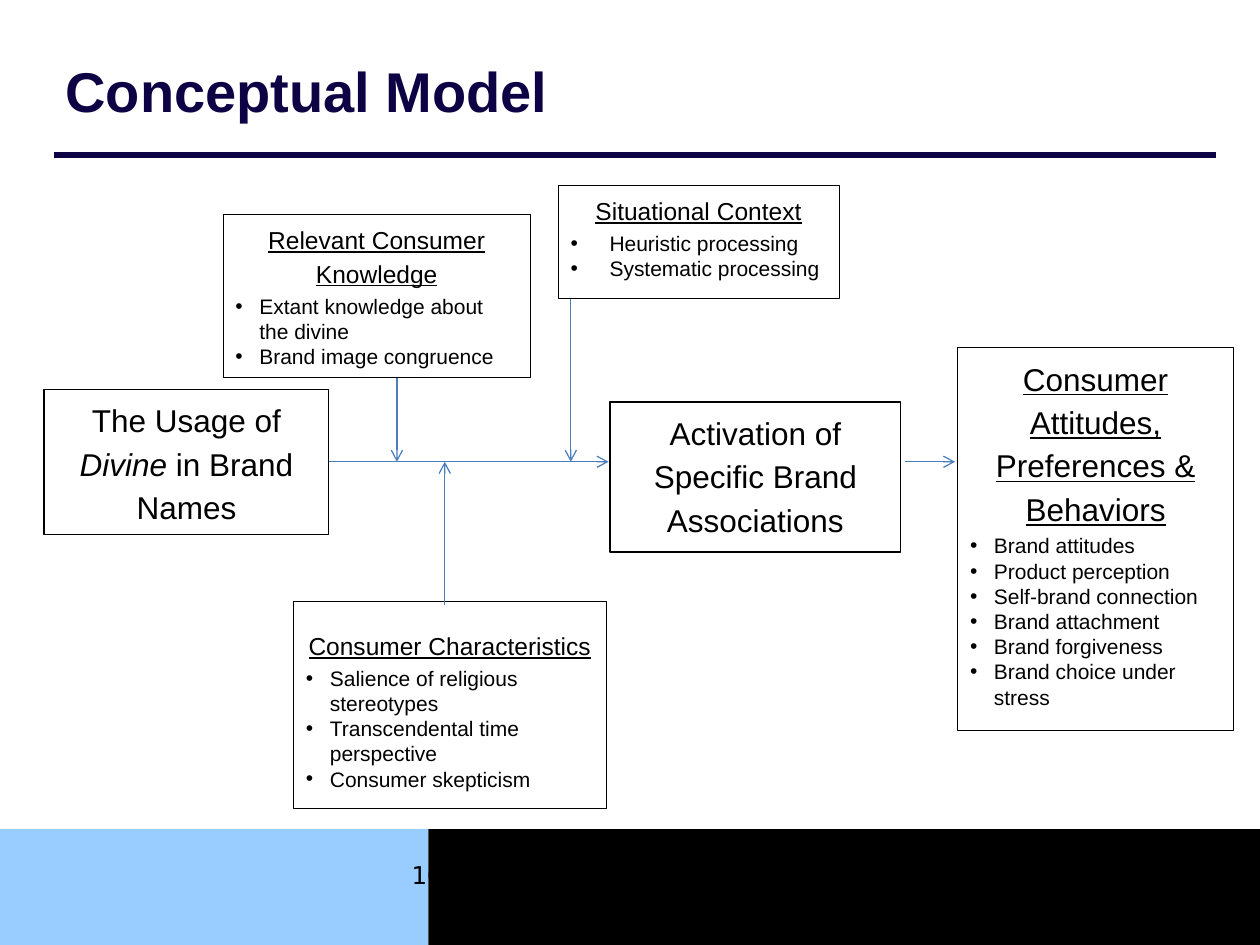
from lxml import etree
from pptx import Presentation, util as u
from pptx.dml.color import RGBColor
from pptx.enum import shapes, text
from pptx.oxml import ns

NAVY = RGBColor(0x0D, 0x03, 0x44)
SKY = RGBColor(0x99, 0xCC, 0xFF)
BLUE = RGBColor(0x4B, 0x7E, 0xBC)
BLACK = RGBColor(0, 0, 0)
WHITE = RGBColor(255, 255, 255)

deck = Presentation()
deck.slide_width, deck.slide_height = u.Inches(10), u.Inches(7.5)
slide = deck.slides.add_slide(deck.slide_layouts[5])
COL = deck.slide_width / 100
ROW = deck.slide_height / 75


def add_box(left, top, width, height, fill, border=None, heading=(), size=14,
            bullets=(), indent=0.19, inset=0.05):
    box = slide.shapes.add_shape(
        shapes.MSO_SHAPE.RECTANGLE, int(left * COL), int(top * ROW),
        int(width * COL), int(height * ROW))
    box.shadow.inherit = False
    box.fill.solid()
    box.fill.fore_color.rgb = fill
    if border:
        box.line.color.rgb = BLACK
        box.line.width = u.Pt(border)
    else:
        box.line.fill.background()
    frame = box.text_frame
    frame.word_wrap = True
    frame.vertical_anchor = text.MSO_ANCHOR.TOP
    frame.margin_top = u.Inches(inset)
    title_line = frame.paragraphs[0]
    title_line.alignment = text.PP_ALIGN.CENTER
    if heading:
        title_line.line_spacing = 1.15
        title_line.space_after = u.Pt(3)
    for position, part in enumerate(heading):
        run = title_line.add_run()
        run.text = part
        run.font.name, run.font.size = "Arial", u.Pt(size)
        run.font.color.rgb = BLACK
        run.font.underline = bool(bullets)
        run.font.italic = position == 1
    for bullet in bullets:
        item = frame.add_paragraph()
        item.text = bullet
        item.alignment = text.PP_ALIGN.LEFT
        props = item._p.get_or_add_pPr()
        props.set("marL", str(u.Inches(indent)))
        props.set("indent", str(-u.Inches(indent)))
        etree.SubElement(props, ns.qn("a:buFont"), typeface="Arial")
        etree.SubElement(props, ns.qn("a:buChar"), char="•")
        font = item.runs[0].font
        font.name, font.size = "Arial", u.Pt(12)
        font.color.rgb = BLACK
    return box


def add_line(x1, y1, x2, y2, color, weight, arrow=True):
    line = slide.shapes.add_connector(
        shapes.MSO_CONNECTOR.STRAIGHT, int(x1 * COL), int(y1 * ROW),
        int(x2 * COL), int(y2 * ROW))
    line.line.color.rgb = color
    line.line.width = u.Pt(weight)
    if arrow:
        etree.SubElement(line.line._get_or_add_ln(), ns.qn("a:tailEnd"), type="arrow")
    etree.SubElement(line._element.spPr, ns.qn("a:effectLst"))
    return line


add_box(0, 65.8, 34, 9.2, SKY)
add_box(34, 65.8, 66, 9.2, BLACK)
add_line(4.3, 12.3, 96.5, 12.3, NAVY, 3, arrow=False)

title = slide.shapes.title
title.left, title.top = int(4.2 * COL), int(2.8 * ROW)
title.width, title.height = int(93.4 * COL), int(8.7 * ROW)
title.text_frame.text = "Conceptual Model"
title.text_frame.vertical_anchor = text.MSO_ANCHOR.MIDDLE
headline = title.text_frame.paragraphs[0]
headline.alignment = text.PP_ALIGN.LEFT
headline_font = headline.runs[0].font
headline_font.name, headline_font.size, headline_font.bold = "Arial", u.Pt(32), True
headline_font.color.rgb = NAVY

page = slide.shapes.add_textbox(
    int(30.8 * COL), int(67.8 * ROW), int(6.2 * COL), int(3.3 * ROW))
page.text_frame.word_wrap = True
page.text_frame.vertical_anchor = text.MSO_ANCHOR.MIDDLE
page.text_frame.text = "10"
page_number = page.text_frame.paragraphs[0]
page_number.alignment = text.PP_ALIGN.CENTER
page_font = page_number.runs[0].font
page_font.name, page_font.size = "DejaVu Sans", u.Pt(14)
page_font.color.rgb = BLACK

usage = add_box(3.5, 30.9, 22.6, 11.5, WHITE, 0.75,
                ["The Usage of ", "Divine", " in Brand Names"], 18)
add_box(48.4, 31.9, 23.1, 11.9, WHITE, 0.75,
        ["Activation of Specific Brand Associations"], 18)
add_box(23.3, 47.7, 24.8, 16.5, WHITE, 0.5, ["Consumer Characteristics"],
        bullets=["Salience of religious stereotypes",
                 "Transcendental time perspective",
                 "Consumer skepticism"], inset=0.2)
add_box(76, 27.6, 21.9, 30.4, WHITE, 0.5,
        ["Consumer Attitudes, Preferences & Behaviors"], 18,
        ["Brand attitudes", "Product perception", "Self-brand connection",
         "Brand attachment", "Brand forgiveness", "Brand choice under stress"])
add_box(17.7, 17, 24.4, 13, WHITE, 0.5, ["Relevant Consumer Knowledge"],
        bullets=["Extant knowledge about the divine", "Brand image congruence"])
add_box(44.3, 14.7, 22.3, 9, WHITE, 0.5, ["Situational Context"],
        bullets=["Heuristic processing", "Systematic processing"], indent=0.31)

AXIS = 30.9 + 11.5 / 2
main_path = add_line(26.1, AXIS, 48.3, AXIS, BLUE, 0.75)
main_path.begin_connect(usage, 3)
for x1, y1, x2 in [(31.5, 30, 31.5), (35.3, 48, 35.3),
                   (71.8, AXIS, 75.8), (45.3, 23.7, 45.3)]:
    add_line(x1, y1, x2, AXIS, BLUE, 0.75)

deck.save("out.pptx")
